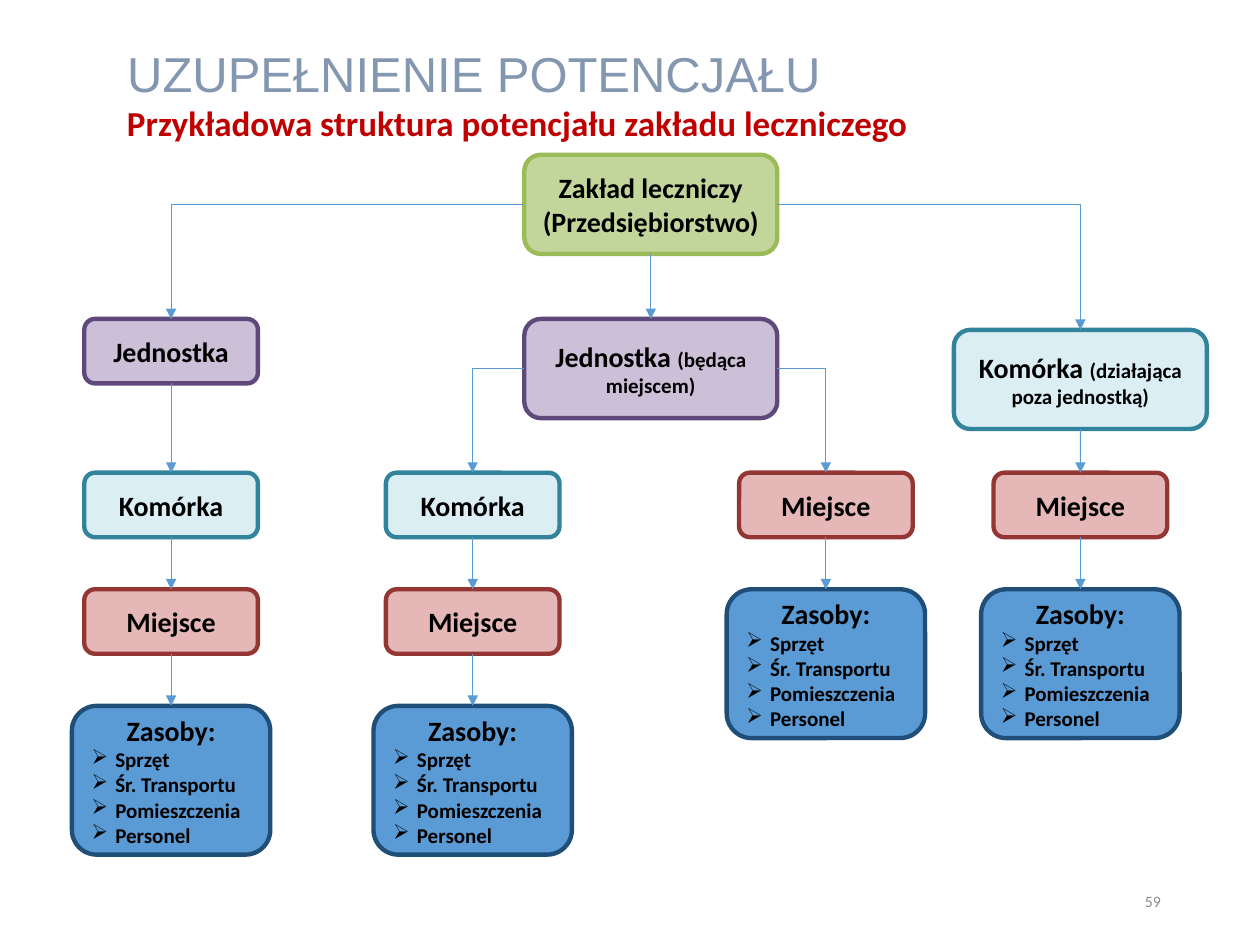
"""Build a slide charting the structure of a healthcare facility."""
from dataclasses import dataclass

from lxml import etree
from pptx import Presentation
from pptx.dml.color import RGBColor
from pptx.enum.shapes import MSO_CONNECTOR, MSO_SHAPE
from pptx.enum.text import MSO_ANCHOR, MSO_AUTO_SIZE, PP_ALIGN
from pptx.oxml.ns import qn
from pptx.util import Cm, Pt

ROUNDED = MSO_SHAPE.ROUNDED_RECTANGLE
STRAIGHT, ELBOW = MSO_CONNECTOR.STRAIGHT, MSO_CONNECTOR.ELBOW
LEFT, CENTER, RIGHT = PP_ALIGN.LEFT, PP_ALIGN.CENTER, PP_ALIGN.RIGHT
TOP, MIDDLE = MSO_ANCHOR.TOP, MSO_ANCHOR.MIDDLE
NO_AUTOFIT = MSO_AUTO_SIZE.NONE
TITLE_ONLY = 5
SITE_TOP, SITE_LEFT, SITE_BOTTOM, SITE_RIGHT = range(4)


@dataclass(frozen=True)
class Theme:
    """Fonts, type sizes in points and colours of the slide."""
    title_font: str = "Arial"
    body_font: str = "Calibri"
    title_size: int = 28
    subtitle_size: int = 20
    label_size: int = 16
    detail_size: int = 12
    number_size: int = 9
    title: str = "8497B0"
    subtitle: str = "C00000"
    number: str = "8C8C8C"
    text: str = "000000"
    arrow: str = "5B9BD5"
    facility: tuple = ("C2D69B", "9BBB59")
    unit: tuple = ("CCC0D9", "5F497A")
    cell: tuple = ("DAEEF3", "31849B")
    place: tuple = ("E5B8B7", "943634")
    resources: tuple = ("5B9BD5", "1F4E79")


THEME = Theme()
SMALL, WIDE, LARGE = (3.5, 1.3), (5.1, 2.0), (4.0, 3.0)
FIRST_X, SECOND_X, MIDDLE_X, THIRD_X, FOURTH_X = 3.45, 9.53, 13.12, 16.65, 21.78
FACILITY_Y, UNIT_Y, OUTSIDE_CELL_Y = 3.12, 6.43, 6.65
BRANCH_Y, ROW_STEP = 9.53, 2.35
RESOURCES = ("Sprzęt", "Śr. Transportu", "Pomieszczenia", "Personel")


def add_run(paragraph, text, size, color=THEME.text, font=THEME.body_font, bold=True):
    """Add one formatted run to a paragraph."""
    run = paragraph.add_run()
    run.text = text
    run.font.name = font
    run.font.size = Pt(size)
    run.font.bold = bold
    run.font.color.rgb = RGBColor.from_string(color)


def place_title(slide, text):
    """Move and format the title placeholder."""
    title = slide.shapes.title
    title.left, title.top, title.width, title.height = Cm(2.31), Cm(0.74), Cm(14.63), Cm(1.45)
    frame = title.text_frame
    frame.auto_size = NO_AUTOFIT
    frame.word_wrap = False
    frame.vertical_anchor = TOP
    paragraph = frame.paragraphs[0]
    paragraph.alignment = LEFT
    add_run(paragraph, text, THEME.title_size, THEME.title, THEME.title_font, False)


def add_text(slide, bounds, text, size, color, alignment, anchor, bold):
    """Add a wrapped text box holding one line."""
    frame = slide.shapes.add_textbox(*map(Cm, bounds)).text_frame
    frame.word_wrap = True
    frame.vertical_anchor = anchor
    paragraph = frame.paragraphs[0]
    paragraph.alignment = alignment
    add_run(paragraph, text, size, color, bold=bold)


def add_box(slide, center, top, size, colors, label, detail=""):
    """Add a rounded box centred on a column, with an optional smaller detail."""
    width, height = size
    bounds = map(Cm, (center - width / 2, top, width, height))
    box = slide.shapes.add_shape(ROUNDED, *bounds)
    box.shadow.inherit = False
    fill, line = map(RGBColor.from_string, colors)
    box.fill.solid()
    box.fill.fore_color.rgb = fill
    box.line.color.rgb = line
    box.line.width = Pt(2.5)
    frame = box.text_frame
    frame.word_wrap = True
    frame.vertical_anchor = MIDDLE
    paragraph = frame.paragraphs[0]
    paragraph.alignment = CENTER
    add_run(paragraph, label, THEME.label_size)
    if detail:
        add_run(paragraph, detail, THEME.detail_size)
    return box


def add_bullet(frame, text):
    """Add a paragraph with an arrowhead bullet."""
    paragraph = frame.add_paragraph()
    paragraph.alignment = LEFT
    add_run(paragraph, text, THEME.detail_size)
    properties = paragraph._p.get_or_add_pPr()
    properties.set("marL", str(Cm(0.48)))
    properties.set("indent", str(-Cm(0.48)))
    etree.SubElement(properties, qn("a:buChar"), char="➢")


def add_resources(slide, center, top):
    """Add a box listing the resources of a place."""
    box = add_box(slide, center, top, LARGE, THEME.resources, "Zasoby:")
    for resource in RESOURCES:
        add_bullet(box.text_frame, resource)
    return box


def connect(slide, source, target, site=SITE_BOTTOM):
    """Join two boxes with an arrow, bent once when it leaves from a side."""
    kind = STRAIGHT if site == SITE_BOTTOM else ELBOW
    connector = slide.shapes.add_connector(kind, 0, 0, 0, 0)
    connector.begin_connect(source, site)
    connector.end_connect(target, SITE_TOP)
    connector.line.color.rgb = RGBColor.from_string(THEME.arrow)
    connector.line.width = Pt(0.5)
    properties = connector.element.spPr
    if kind == ELBOW:
        properties.find(qn("a:prstGeom")).set("prst", "bentConnector2")
    etree.SubElement(properties.find(qn("a:ln")), qn("a:tailEnd"), type="triangle")
    etree.SubElement(properties, qn("a:effectLst"))


def add_branch(slide, center, has_cell):
    """Stack a place and its resources, under a cell if wanted, and return the top box."""
    steps = [("Komórka", THEME.cell)] if has_cell else []
    steps.append(("Miejsce", THEME.place))
    boxes = [
        add_box(slide, center, BRANCH_Y + row * ROW_STEP, SMALL, colors, label)
        for row, (label, colors) in enumerate(steps)
    ]
    boxes.append(add_resources(slide, center, BRANCH_Y + len(steps) * ROW_STEP))
    for source, target in zip(boxes, boxes[1:]):
        connect(slide, source, target)
    return boxes[0]


def add_structure(slide):
    """Draw the whole hierarchy of the facility."""
    facility = add_box(slide, MIDDLE_X, FACILITY_Y, WIDE, THEME.facility,
                       "Zakład leczniczy (Przedsiębiorstwo)")
    unit = add_box(slide, FIRST_X, UNIT_Y, SMALL, THEME.unit, "Jednostka")
    place_unit = add_box(slide, MIDDLE_X, UNIT_Y, WIDE, THEME.unit,
                         "Jednostka ", "(będąca miejscem)")
    outside_cell = add_box(slide, FOURTH_X, OUTSIDE_CELL_Y, WIDE, THEME.cell,
                           "Komórka ", "(działająca poza jednostką)")
    connect(slide, facility, unit, SITE_LEFT)
    connect(slide, facility, place_unit)
    connect(slide, facility, outside_cell, SITE_RIGHT)
    connect(slide, unit, add_branch(slide, FIRST_X, True))
    connect(slide, place_unit, add_branch(slide, SECOND_X, True), SITE_LEFT)
    connect(slide, place_unit, add_branch(slide, THIRD_X, False), SITE_RIGHT)
    connect(slide, outside_cell, add_branch(slide, FOURTH_X, False))


def main():
    """Build and save the presentation."""
    presentation = Presentation()
    presentation.slide_width, presentation.slide_height = Cm(25.4), Cm(19.05)
    slide = presentation.slides.add_slide(presentation.slide_layouts[TITLE_ONLY])
    place_title(slide, "UZUPEŁNIENIE POTENCJAŁU")
    add_text(slide, (2.31, 1.93, 21.41, 1.12),
             "Przykładowa struktura potencjału zakładu leczniczego",
             THEME.subtitle_size, THEME.subtitle, LEFT, TOP, True)
    add_structure(slide)
    add_text(slide, (17.93, 17.65, 5.72, 1.02), "59",
             THEME.number_size, THEME.number, RIGHT, MIDDLE, False)
    presentation.save("out.pptx")


if __name__ == "__main__":
    main()
